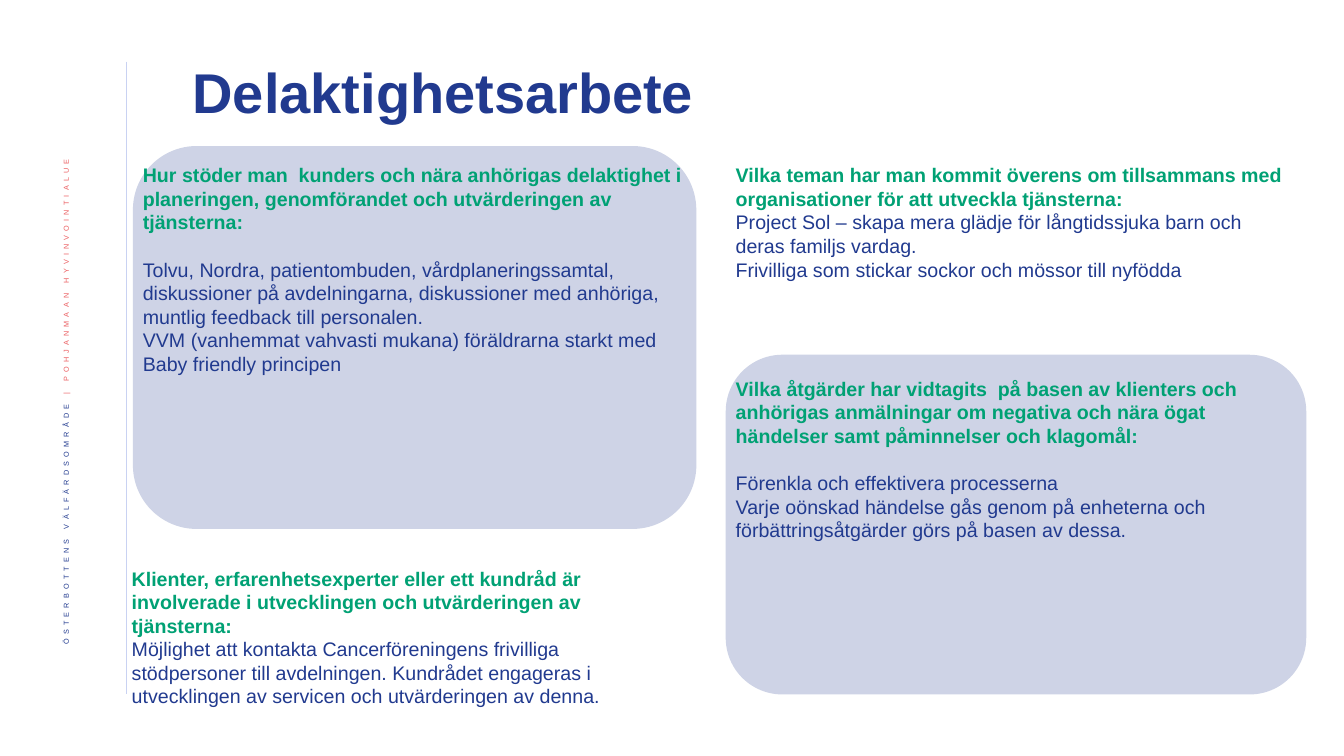
from dataclasses import dataclass

from lxml import etree
from pptx import Presentation
from pptx.dml.color import RGBColor
from pptx.enum.shapes import MSO_CONNECTOR, MSO_SHAPE
from pptx.enum.text import MSO_ANCHOR, PP_ALIGN
from pptx.oxml.ns import qn
from pptx.util import Cm, Pt

STRAIGHT = MSO_CONNECTOR.STRAIGHT
ROUNDED = MSO_SHAPE.ROUNDED_RECTANGLE
MIDDLE = MSO_ANCHOR.MIDDLE
LEFT = PP_ALIGN.LEFT
RIGHT = PP_ALIGN.RIGHT
TITLE_ONLY = 5


@dataclass(frozen=True)
class Theme:
    font: str = "Arial"
    navy: RGBColor = RGBColor(0x21, 0x3A, 0x8F)
    green: RGBColor = RGBColor(0x00, 0xA1, 0x74)
    coral: RGBColor = RGBColor(0xEB, 0x5C, 0x5F)
    rule: RGBColor = RGBColor(0xC9, 0xD2, 0xF2)
    panel_alpha: int = 22000
    title_size: Pt = Pt(40)
    body_size: Pt = Pt(14)
    side_size: Pt = Pt(9)
    heading_gap: Pt = Pt(16.8)


THEME = Theme()

LEFT_COLUMN = Cm(3.35)
LEFT_WIDTH = Cm(14.2)
RIGHT_COLUMN = Cm(18.29)
RIGHT_WIDTH = Cm(14.63)
TOP_ROW = Cm(3.99)

SUPPORT_HEADING = "Hur stöder man  kunders och nära anhörigas delaktighet i planeringen, genomförandet och utvärderingen av tjänsterna:"
SUPPORT_ANSWERS = [
    "Tolvu, Nordra, patientombuden, vårdplaneringssamtal, diskussioner på avdelningarna, diskussioner med anhöriga, muntlig feedback till personalen.",
    "VVM (vanhemmat vahvasti mukana) föräldrarna starkt med",
    "Baby friendly principen",
]
THEMES_HEADING = "Vilka teman har man kommit överens om tillsammans med organisationer för att utveckla tjänsterna:"
THEMES_ANSWERS = [
    "Project Sol – skapa mera glädje för långtidssjuka barn och deras familjs vardag.",
    "Frivilliga som stickar sockor och mössor till nyfödda",
]
CLIENTS_HEADING = "Klienter, erfarenhetsexperter eller ett kundråd är involverade i utvecklingen och utvärderingen av tjänsterna:"
CLIENTS_ANSWERS = [
    "Möjlighet att kontakta Cancerföreningens frivilliga stödpersoner till avdelningen. Kundrådet engageras i utvecklingen av servicen och utvärderingen av denna.",
]
ACTIONS_HEADING = "Vilka åtgärder har vidtagits  på basen av klienters och anhörigas anmälningar om negativa och nära ögat händelser samt påminnelser och klagomål:"
ACTIONS_ANSWERS = [
    "Förenkla och effektivera processerna",
    "Varje oönskad händelse gås genom på enheterna och förbättringsåtgärder görs på basen av dessa.",
]


def add_span(para, text, size, color, bold=False):
    span = para.add_run()
    span.text = text
    span.font.name = THEME.font
    span.font.size = size
    span.font.bold = bold
    span.font.color.rgb = color
    return span


def set_title(page, text):
    title = page.shapes.title
    title.left, title.top, title.width, title.height = Cm(4.6), Cm(1.14), Cm(25.35), Cm(2.51)
    title.text_frame.vertical_anchor = MIDDLE
    para = title.text_frame.paragraphs[0]
    para.alignment = LEFT
    para.line_spacing = 0.9
    add_span(para, text, THEME.title_size, THEME.navy, bold=True)


def add_side_rule(page):
    rule = page.shapes.add_connector(STRAIGHT, Cm(3.18), Cm(1.55), Cm(3.18), Cm(17.48))
    rule.line.color.rgb = THEME.rule
    rule.line.width = Pt(0.5)
    etree.SubElement(rule._element.spPr, qn("a:effectLst"))


def add_side_text(page, parts):
    box = page.shapes.add_textbox(Cm(1.07), Cm(3.61), Cm(1.32), Cm(14.55))
    frame = box.text_frame
    frame.word_wrap = True
    frame.vertical_anchor = MIDDLE
    frame._txBody.bodyPr.set("vert", "vert270")
    para = frame.paragraphs[0]
    para.alignment = RIGHT
    para.line_spacing = 0.9
    for text, color in parts:
        properties = add_span(para, text, THEME.side_size, color)._r.get_or_add_rPr()
        properties.set("baseline", "30000")
        properties.set("spc", "300")


def add_panel(page, left, top, width, height):
    panel = page.shapes.add_shape(ROUNDED, left, top, width, height)
    panel.shadow.inherit = False
    panel.fill.solid()
    panel.fill.fore_color.rgb = THEME.navy
    color = panel._element.spPr.find(qn("a:solidFill"))[0]
    etree.SubElement(color, qn("a:alpha"), val=str(THEME.panel_alpha))
    panel.line.fill.background()


def add_answer_box(page, left, top, width, height, heading, answers, gap=Pt(0)):
    box = page.shapes.add_textbox(left, top, width, height)
    frame = box.text_frame
    frame.word_wrap = True
    para = frame.paragraphs[0]
    para.space_after = gap
    add_span(para, heading, THEME.body_size, THEME.green, bold=True)
    for answer in answers:
        add_span(frame.add_paragraph(), answer, THEME.body_size, THEME.navy)


def main():
    deck = Presentation()
    deck.slide_width, deck.slide_height = Cm(33.87), Cm(19.05)
    page = deck.slides.add_slide(deck.slide_layouts[TITLE_ONLY])

    add_side_rule(page)
    add_side_text(page, [
        ("ÖSTERBOTTENS VÄLFÄRDSOMRÅDE ", THEME.navy),
        ("| POHJANMAAN HYVINVOINTIALUE ", THEME.coral),
    ])
    set_title(page, "Delaktighetsarbete")

    add_panel(page, LEFT_COLUMN, Cm(3.68), LEFT_WIDTH, Cm(9.65))
    add_answer_box(page, LEFT_COLUMN, TOP_ROW, LEFT_WIDTH, Cm(5.64),
                   SUPPORT_HEADING, SUPPORT_ANSWERS, THEME.heading_gap)
    add_answer_box(page, RIGHT_COLUMN, TOP_ROW, RIGHT_WIDTH, Cm(3.25),
                   THEMES_HEADING, THEMES_ANSWERS)
    add_answer_box(page, Cm(3.07), Cm(14.15), LEFT_WIDTH, Cm(3.84),
                   CLIENTS_HEADING, CLIENTS_ANSWERS)
    add_panel(page, RIGHT_COLUMN, Cm(8.94), RIGHT_WIDTH, Cm(8.56))
    add_answer_box(page, RIGHT_COLUMN, Cm(9.37), RIGHT_WIDTH, Cm(4.45),
                   ACTIONS_HEADING, ACTIONS_ANSWERS, THEME.heading_gap)

    deck.save("out.pptx")


if __name__ == "__main__":
    main()
